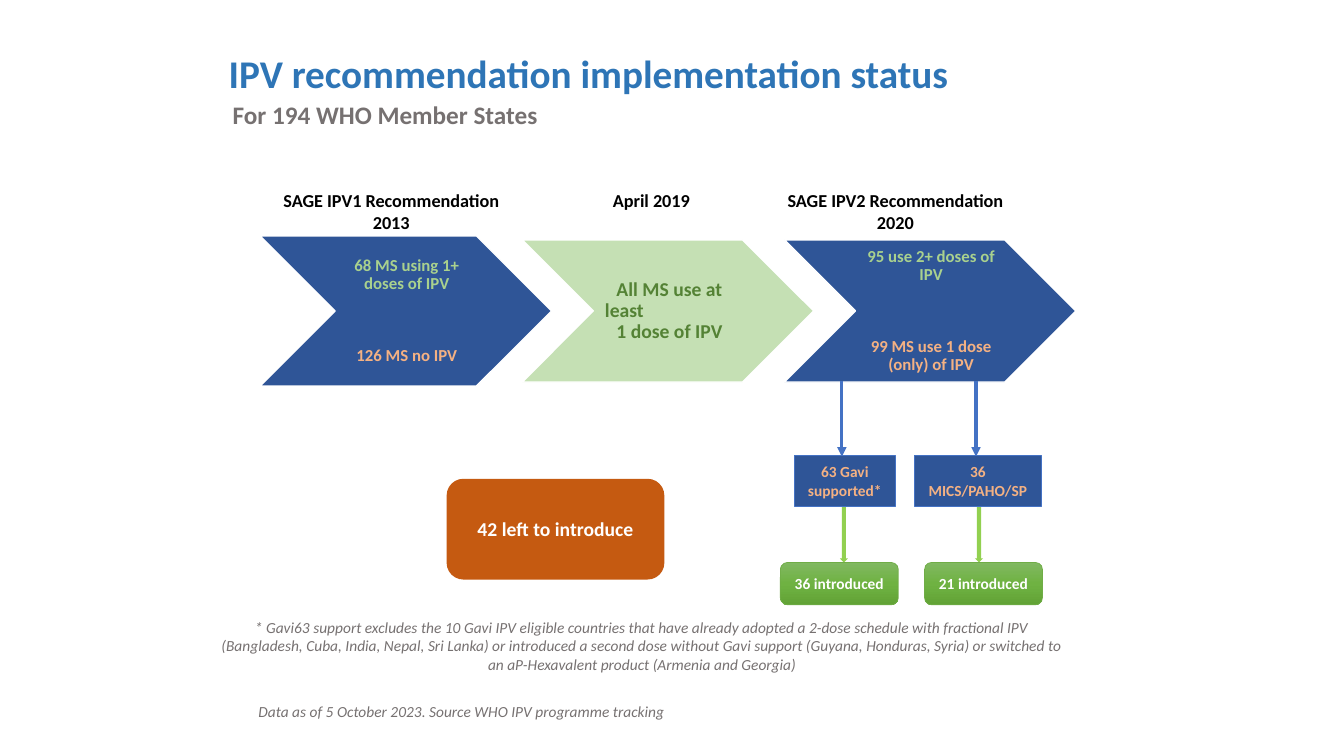
"""Build the slide on the status of the IPV recommendations in WHO Member States."""
from copy import deepcopy

from lxml import etree
from pptx import Presentation
from pptx.dml.color import RGBColor
from pptx.enum import shapes, text
from pptx.oxml import ns
from pptx.util import Inches, Pt

NAVY = RGBColor(0x2F, 0x55, 0x97)
BLUE = RGBColor(0x44, 0x72, 0xC4)
TITLE_BLUE = RGBColor(0x2E, 0x75, 0xB6)
PALE_GREEN = RGBColor(0xC5, 0xE0, 0xB4)
SOFT_GREEN = RGBColor(0xA9, 0xD1, 0x8E)
DARK_GREEN = RGBColor(0x54, 0x82, 0x35)
LIME = RGBColor(0x92, 0xD0, 0x50)
EDGE_GREEN = RGBColor(0x70, 0xAD, 0x47)
FADE = [RGBColor(0x81, 0xB8, 0x61), RGBColor(0x6F, 0xB2, 0x42), RGBColor(0x62, 0xA3, 0x36)]
PEACH = RGBColor(0xF4, 0xB1, 0x83)
RUST = RGBColor(0xC5, 0x5A, 0x11)
GREY = RGBColor(0x76, 0x71, 0x71)
BLACK = RGBColor(0, 0, 0)
WHITE = RGBColor(0xFF, 0xFF, 0xFF)

FORM = shapes.MSO_SHAPE
MIDDLE = text.MSO_ANCHOR.MIDDLE
TOP = text.MSO_ANCHOR.TOP
CENTER = text.PP_ALIGN.CENTER
LEFT = text.PP_ALIGN.LEFT

deck = Presentation()
deck.slide_width, deck.slide_height = Inches(13.33), Inches(7.5)
slide = deck.slides.add_slide(deck.slide_layouts[6])


def draw(form, box, fill, edge=None, weight=1):
    shape = slide.shapes.add_shape(form, *map(Inches, box))
    shape.shadow.inherit = False
    shape.fill.solid()
    shape.fill.fore_color.rgb = fill
    if edge is None:
        shape.line.fill.background()
    else:
        shape.line.color.rgb = edge
        shape.line.width = Pt(weight)
    return shape


def write(words, box=None, shape=None, size=11, color=GREY, bold=True, italic=False,
          align=CENTER, anchor=TOP, spacing=1.0, after=0, insets=(0.1, 0.05, 0.1, 0.05)):
    frame = (shape or slide.shapes.add_textbox(*map(Inches, box))).text_frame
    frame.word_wrap = True
    frame.vertical_anchor = anchor
    frame.margin_left, frame.margin_top, frame.margin_right, frame.margin_bottom = map(Inches, insets)
    frame.text = words
    for paragraph in frame.paragraphs:
        paragraph.alignment = align
        paragraph.line_spacing = spacing
        paragraph.space_after = Pt(after)
        for run in paragraph.runs:
            run.font.name = "Calibri"
            run.font.size = Pt(size)
            run.font.bold = bold
            run.font.italic = italic
            run.font.color.rgb = color
    return frame


write("IPV recommendation implementation status", (2.17, 0.49, 8.62, 0.67),
      size=28, color=TITLE_BLUE, align=LEFT, spacing=0.9)
write("For 194 WHO Member States", (2.21, 0.94, 5, 0.4), size=18, align=LEFT, after=6)

stages = [
    (2.67, "SAGE IPV1 Recommendation\n2013", (2.58, 2.34, 2.89, 1.49), NAVY),
    (5.25, "April 2019", (5.18, 2.38, 2.89, 1.41), PALE_GREEN),
    (7.67, "SAGE IPV2 Recommendation\n2020", (7.78, 2.38, 2.89, 1.41), NAVY),
]
for heading_left, heading, chevron, fill in stages:
    draw(FORM.CHEVRON, chevron, fill, WHITE)
    write(heading, (heading_left, 1.83, 2.42, 0.54), size=13, color=BLACK)

counts = [
    ("68 MS using 1+ doses of IPV", (3.32, 2.48, 1.4, 0.5), SOFT_GREEN),
    ("126 MS no IPV", (3.32, 3.28, 1.4, 0.5), PEACH),
    ("95 use 2+ doses of IPV", (8.48, 2.39, 1.48, 0.5), SOFT_GREEN),
    ("99 MS use 1 dose (only) of IPV", (8.48, 3.28, 1.48, 0.5), PEACH),
]
for count, box, color in counts:
    write(count, box, size=12, color=color, anchor=MIDDLE, spacing=0.9,
          insets=(0.05, 0.02, 0.02, 0.02))
milestone = write("All MS use at\nleast\n1 dose of IPV", (5.88, 2.38, 1.48, 1.41), size=14,
                  color=DARK_GREEN, anchor=MIDDLE, spacing=0.9, insets=(0.12, 0.02, 0.08, 0.02))
milestone.paragraphs[1].alignment = LEFT

branches = [
    (8.35, "63 Gavi supported*", (7.88, 4.52, 1, 0.5), 8.33, "36 introduced", 7.74),
    (9.68, "36 MICS/PAHO/SP", (9.07, 4.52, 1.26, 0.5), 9.67, "21 introduced", 9.17),
]
for arrow_x, group, group_box, drop_left, result, result_left in branches:
    arrow = slide.shapes.add_connector(shapes.MSO_CONNECTOR.STRAIGHT, Inches(arrow_x), Inches(3.78),
                                       Inches(arrow_x), Inches(4.53))
    arrow.line.color.rgb = BLUE
    arrow.line.width = Pt(2.25)
    etree.SubElement(arrow.line._get_or_add_ln(), ns.qn("a:tailEnd"), type="triangle")
    etree.SubElement(arrow._element.spPr, ns.qn("a:effectLst"))

    draw(FORM.DOWN_ARROW, (drop_left, 5.02, 0.08, 0.56), LIME)
    write(group, shape=draw(FORM.RECTANGLE, group_box, NAVY, BLUE, 0.5),
          color=PEACH, spacing=1.07, after=8)

    introduced = draw(FORM.ROUNDED_RECTANGLE, (result_left, 5.58, 1.17, 0.42), LIME, EDGE_GREEN, 0.5)
    introduced.fill.gradient()
    introduced.fill.gradient_angle = 270
    stop_list = introduced._element.spPr.find(ns.qn("a:gradFill")).find(ns.qn("a:gsLst"))
    stop_list.insert(1, deepcopy(stop_list[0]))
    for stop, color, position in zip(introduced.fill.gradient_stops, FADE, (0, 0.5, 1)):
        stop.color.rgb = color
        stop.position = position
    write(result, shape=introduced, color=WHITE, anchor=MIDDLE)

remaining = draw(FORM.ROUNDED_RECTANGLE, (4.43, 4.75, 2.16, 1), RUST)
write("42 left to introduce", shape=remaining, size=14, color=WHITE, anchor=MIDDLE)

write("* Gavi63 support excludes the 10 Gavi IPV eligible countries that have already adopted a "
      "2-dose schedule with fractional IPV (Bangladesh, Cuba, India, Nepal, Sri Lanka) or introduced "
      "a second dose without Gavi support (Guyana, Honduras, Syria) or switched to "
      "an aP-Hexavalent product (Armenia and Georgia)",
      (2.08, 6.08, 8.58, 0.66), bold=False, italic=True)
write("Data as of 5 October 2023. Source WHO IPV programme tracking", (2.08, 6.92, 5, 0.29),
      bold=False, italic=True)

deck.save("out.pptx")
